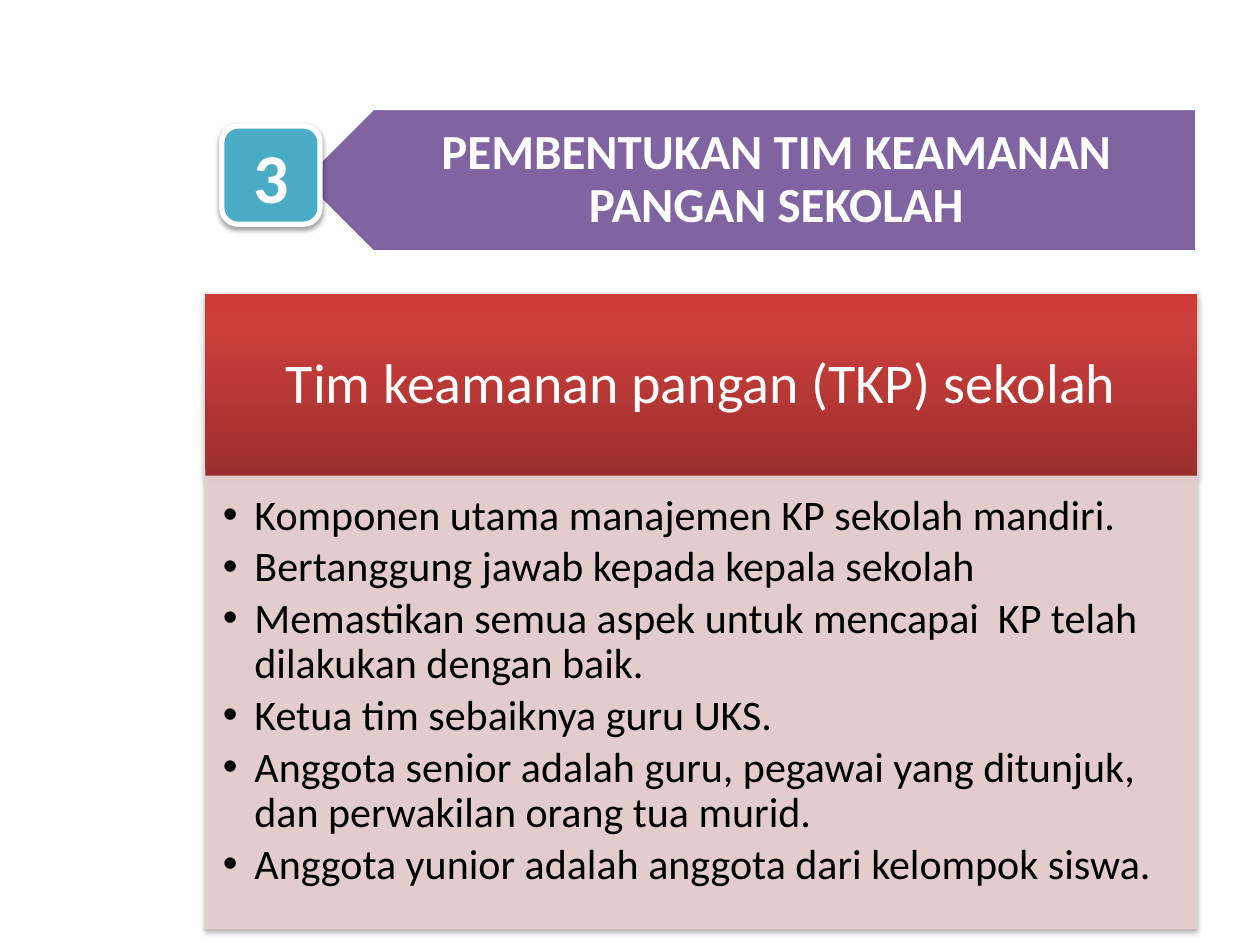
from copy import deepcopy

from lxml import etree
from pptx import Presentation
from pptx import util as u
from pptx.dml.color import RGBColor
from pptx.enum import shapes, text
from pptx.oxml.ns import qn

# Content
NUMBER = "3"
TITLE = "PEMBENTUKAN TIM KEAMANAN PANGAN SEKOLAH"
HEADING = "Tim keamanan pangan (TKP) sekolah"
POINTS = [
    "Komponen utama manajemen KP sekolah mandiri.",
    "Bertanggung jawab kepada kepala sekolah",
    "Memastikan semua aspek untuk mencapai  KP telah dilakukan dengan baik.",
    "Ketua tim sebaiknya guru UKS.",
    "Anggota senior adalah guru, pegawai yang ditunjuk, dan perwakilan orang tua murid.",
    "Anggota yunior adalah anggota dari kelompok siswa.",
]

THEME = dict(
    font="Calibri", white="FFFFFF", black="000000",
    banner="8064A2", badge="4BACC6", card="E8D0D0",
    heading=[(0, "9C2F2D"), (0.8, "CB3E3A"), (1, "CE3B37")],
    title_size=28, number_size=40, heading_size=32, body_size=24,
)

# Layout in inches: card parts share a left edge and width
LEFT, WIDTH = 1.63, 7.87
HEAD_TOP, HEAD_H, BODY_H = 2.33, 1.45, 3.59
BANNER_TOP, BANNER_H, BANNER_W = 0.86, 1.14, 7.11
RIGHT = LEFT + WIDTH
BADGE = 0.78
TITLE_W = 6.87

MSO = shapes.MSO_SHAPE


def rgb(value):
    return RGBColor.from_string(value)


def add_alpha(fill_element, percent):
    color = fill_element.find(".//" + qn("a:srgbClr"))
    etree.SubElement(color, qn("a:alpha"), val=str(percent * 1000))


def add_shadow(sp, opacity, blur, dist):
    effects = sp._element.spPr.find(qn("a:effectLst"))
    shadow = etree.SubElement(
        effects, qn("a:outerShdw"), blurRad=str(u.Pt(blur)), dist=str(u.Pt(dist)),
        dir="5400000", rotWithShape="0")
    etree.SubElement(shadow, qn("a:srgbClr"), val=THEME["black"])
    add_alpha(shadow, opacity)


def add_box(s, kind, box, fill=None, line=None, line_width=0):
    sp = s.shapes.add_shape(kind, *map(u.Inches, box))
    sp.shadow.inherit = False
    if fill:
        sp.fill.solid()
        sp.fill.fore_color.rgb = rgb(fill)
    if line:
        sp.line.color.rgb = rgb(line)
        sp.line.width = u.Pt(line_width)
    else:
        sp.line.fill.background()
    return sp


def add_text(sp, lines, size, color, bold=False, insets=(0.1, 0.05, 0.1, 0.05),
             spacing=0.9, after=0, bullets=False):
    tf = sp.text_frame
    tf.word_wrap = True
    tf.margin_left, tf.margin_top, tf.margin_right, tf.margin_bottom = map(u.Inches, insets)
    tf.vertical_anchor = text.MSO_ANCHOR.TOP if bullets else text.MSO_ANCHOR.MIDDLE
    for i, line in enumerate(lines):
        p = tf.add_paragraph() if i else tf.paragraphs[0]
        p.alignment = text.PP_ALIGN.LEFT if bullets else text.PP_ALIGN.CENTER
        p.line_spacing = spacing
        p.space_after = u.Pt(after)
        if bullets:
            pPr = p._p.get_or_add_pPr()
            pPr.set("marL", str(u.Inches(0.25)))
            pPr.set("indent", str(-u.Inches(0.25)))
            etree.SubElement(pPr, qn("a:buFont"), typeface="Arial")
            etree.SubElement(pPr, qn("a:buChar"), char="•")
        r = p.add_run()
        r.text = line
        r.font.name = THEME["font"]
        r.font.size = u.Pt(size)
        r.font.bold = bold
        r.font.color.rgb = rgb(color)


def main():
    t = THEME
    prs = Presentation()
    prs.slide_width, prs.slide_height = u.Inches(10), u.Inches(7.5)
    s = prs.slides.add_slide(prs.slide_layouts[6])

    # Card heading with three gradient stops
    sp = add_box(s, MSO.RECTANGLE, (LEFT, HEAD_TOP, WIDTH, HEAD_H))
    sp.fill.gradient()
    sp.fill.gradient_angle = 90
    stops = sp._element.spPr.find(".//" + qn("a:gsLst"))
    stops.append(deepcopy(stops[-1]))
    for stop, (position, color) in zip(sp.fill.gradient_stops, t["heading"]):
        stop.position = position
        stop.color.rgb = rgb(color)
    add_shadow(sp, 35, 3.1, 1.8)
    add_text(sp, [HEADING], t["heading_size"], t["white"], insets=(0.25, 0.14, 0.25, 0.14))

    # Card body with bullets
    sp = add_box(s, MSO.RECTANGLE, (LEFT, HEAD_TOP + HEAD_H, WIDTH, BODY_H),
                 t["card"], t["card"], 0.75)
    for fill in list(sp._element.spPr.iter(qn("a:solidFill"))):
        add_alpha(fill, 90)
    add_shadow(sp, 35, 3.1, 1.8)
    add_text(sp, POINTS, t["body_size"], t["black"], insets=(0.14, 0.14, 0.19, 0.21),
             after=3.6, bullets=True)

    # Banner pointing left, with upright text over it
    sp = add_box(s, MSO.PENTAGON, (RIGHT - BANNER_W, BANNER_TOP, BANNER_W, BANNER_H),
                 t["banner"], t["white"], 2)
    sp.rotation = 180
    sp = s.shapes.add_textbox(*map(u.Inches, (RIGHT - TITLE_W, BANNER_TOP, TITLE_W, BANNER_H)))
    add_text(sp, [TITLE], t["title_size"], t["white"], True, (0.35, 0.08, 0.16, 0.08))

    # Number badge
    sp = add_box(s, MSO.ROUNDED_RECTANGLE, (1.76, 1, BADGE, BADGE), t["badge"], t["white"], 3)
    add_shadow(sp, 38, 3.1, 1.6)
    add_text(sp, [NUMBER], t["number_size"], t["white"], True, spacing=1.0)

    prs.save("out.pptx")


if __name__ == "__main__":
    main()
